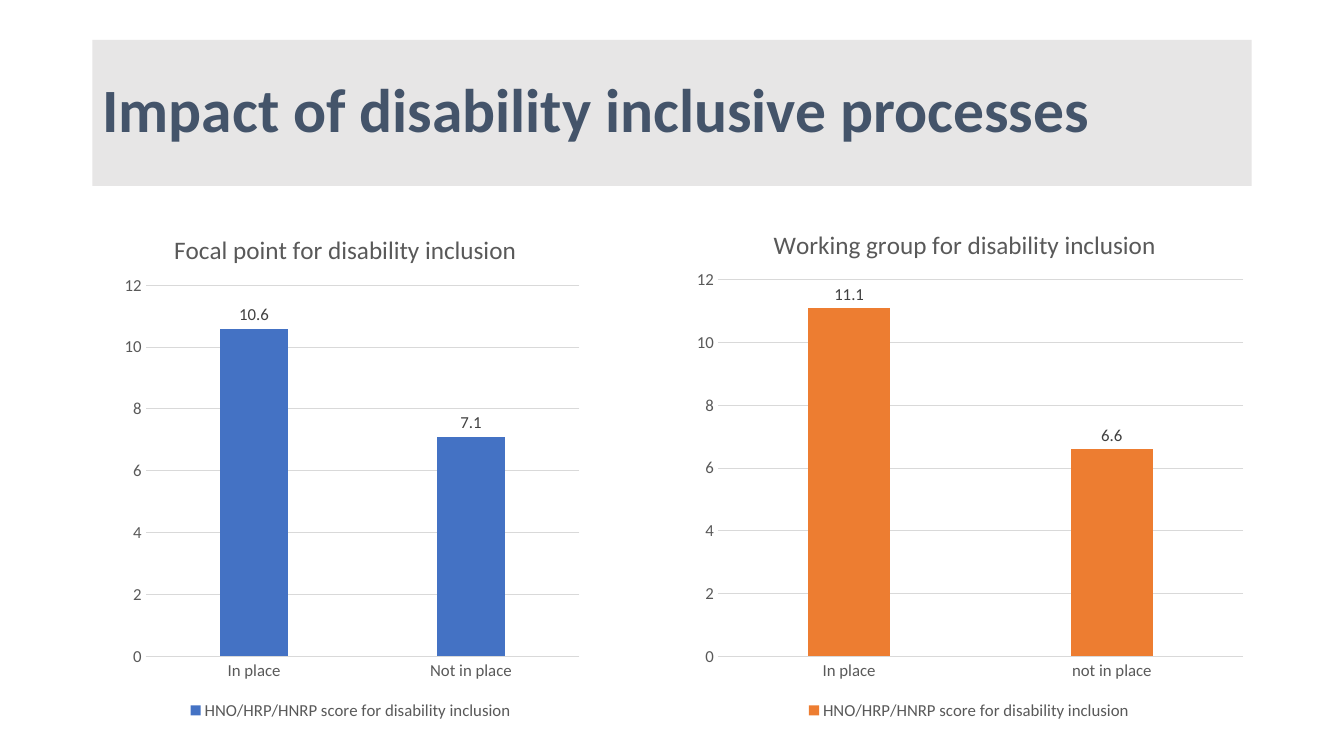
from lxml import etree
from pptx import Presentation
from pptx.chart.data import CategoryChartData
from pptx.dml.color import RGBColor
from pptx.enum.chart import XL_CHART_TYPE, XL_LABEL_POSITION, XL_LEGEND_POSITION, XL_TICK_MARK
from pptx.enum.text import MSO_ANCHOR, PP_ALIGN
from pptx.oxml.ns import qn
from pptx.util import Pt

PX = 9525  # EMU per px, 96 px to the inch
FONT = "Calibri"
COLUMNS = XL_CHART_TYPE.COLUMN_CLUSTERED
LABEL_OUTSIDE = XL_LABEL_POSITION.OUTSIDE_END
LEGEND_BOTTOM = XL_LEGEND_POSITION.BOTTOM
NO_TICK = XL_TICK_MARK.NONE
MIDDLE = MSO_ANCHOR.MIDDLE
LEFT = PP_ALIGN.LEFT

BAND = RGBColor(0xE7, 0xE6, 0xE6)
NAVY = RGBColor(0x44, 0x54, 0x6A)
BLUE = RGBColor(0x44, 0x72, 0xC4)
ORANGE = RGBColor(0xED, 0x7D, 0x31)
GRID = RGBColor(0xD9, 0xD9, 0xD9)
GREY = RGBColor(0x59, 0x59, 0x59)
DARK = RGBColor(0x40, 0x40, 0x40)

SCORE = "HNO/HRP/HNRP score for disability inclusion"


def px(*lengths):
    return [length * PX for length in lengths]


def set_font(font, size, color, bold=False):
    font.name = FONT
    font.size = Pt(size)
    font.bold = bold
    font.color.rgb = color


def set_line(line, color):
    line.color.rgb = color
    line.width = Pt(0.75)


def place(element, index, fractions, inner=False):
    """Give a chart part a fixed place, in fractions of the chart's size."""
    for old in element.findall(qn("c:layout")):
        element.remove(old)
    layout = etree.Element(qn("c:layout"))
    manual = etree.SubElement(layout, qn("c:manualLayout"))
    settings = [("layoutTarget", "inner")] if inner else []
    settings += [("xMode", "edge"), ("yMode", "edge")]
    settings += zip("xywh", fractions)
    for tag, value in settings:
        etree.SubElement(manual, qn(f"c:{tag}")).set("val", str(value))
    element.insert(index, layout)


def add_title(page, text, bounds):
    title = page.shapes.title
    title.left, title.top, title.width, title.height = px(*bounds)
    title.fill.solid()
    title.fill.fore_color.rgb = BAND
    frame = title.text_frame
    frame.text = text
    frame.vertical_anchor = MIDDLE
    para = frame.paragraphs[0]
    para.alignment = LEFT
    para.line_spacing = 0.9
    set_font(para.font, 44, NAVY, bold=True)


def add_score_chart(page, bounds, heading, categories, scores, color, heading_place, plot_place):
    data = CategoryChartData()
    data.categories = categories
    data.add_series(SCORE, scores)
    chart = page.shapes.add_chart(COLUMNS, *px(*bounds), data).chart
    set_font(chart.font, 12, GREY)

    # Heading and legend
    chart.has_title = True
    frame = chart.chart_title.text_frame
    frame.text = heading
    set_font(frame.paragraphs[0].font, 18, GREY)
    place(chart.chart_title._element, 1, heading_place)
    chart.has_legend = True
    chart.legend.position = LEGEND_BOTTOM
    chart.legend.include_in_layout = False
    set_font(chart.legend.font, 12, GREY)

    # Axes
    for axis in (chart.category_axis, chart.value_axis):
        axis.major_tick_mark = axis.minor_tick_mark = NO_TICK
        set_font(axis.tick_labels.font, 12, GREY)
    set_line(chart.category_axis.format.line, GRID)
    scale = chart.value_axis
    scale.minimum_scale, scale.maximum_scale, scale.major_unit = 0, 12, 2
    scale.format.line.fill.background()
    set_line(scale.major_gridlines.format.line, GRID)

    # Columns and their values
    plot = chart.plots[0]
    plot.gap_width, plot.overlap = 219, -27
    plot.vary_by_categories = False
    fill = plot.series[0].format.fill
    fill.solid()
    fill.fore_color.rgb = color
    plot.has_data_labels = True
    labels = plot.data_labels
    labels.show_value = True
    labels.position = LABEL_OUTSIDE
    set_font(labels.font, 12, DARK)
    place(chart._chartSpace.chart.plotArea, 0, plot_place, inner=True)


def main():
    deck = Presentation()
    deck.slide_width, deck.slide_height = px(1280, 720)
    page = deck.slides.add_slide(deck.slide_layouts[5])
    add_title(page, "Impact of disability inclusive processes", (88, 38, 1104, 139))
    add_score_chart(page, (651, 192, 544, 498), "Working group for disability inclusion",
                    ["In place", "not in place"], [11.1, 6.6], ORANGE,
                    (0.15, 0.04), (0.06, 0.15, 0.92, 0.72))
    add_score_chart(page, (107, 192, 454, 498), "Focal point for disability inclusion",
                    ["In place", "Not in place"], [10.6, 7.1], BLUE,
                    (0.12, 0.05), (0.07, 0.16, 0.91, 0.71))
    deck.save("out.pptx")


if __name__ == "__main__":
    main()
